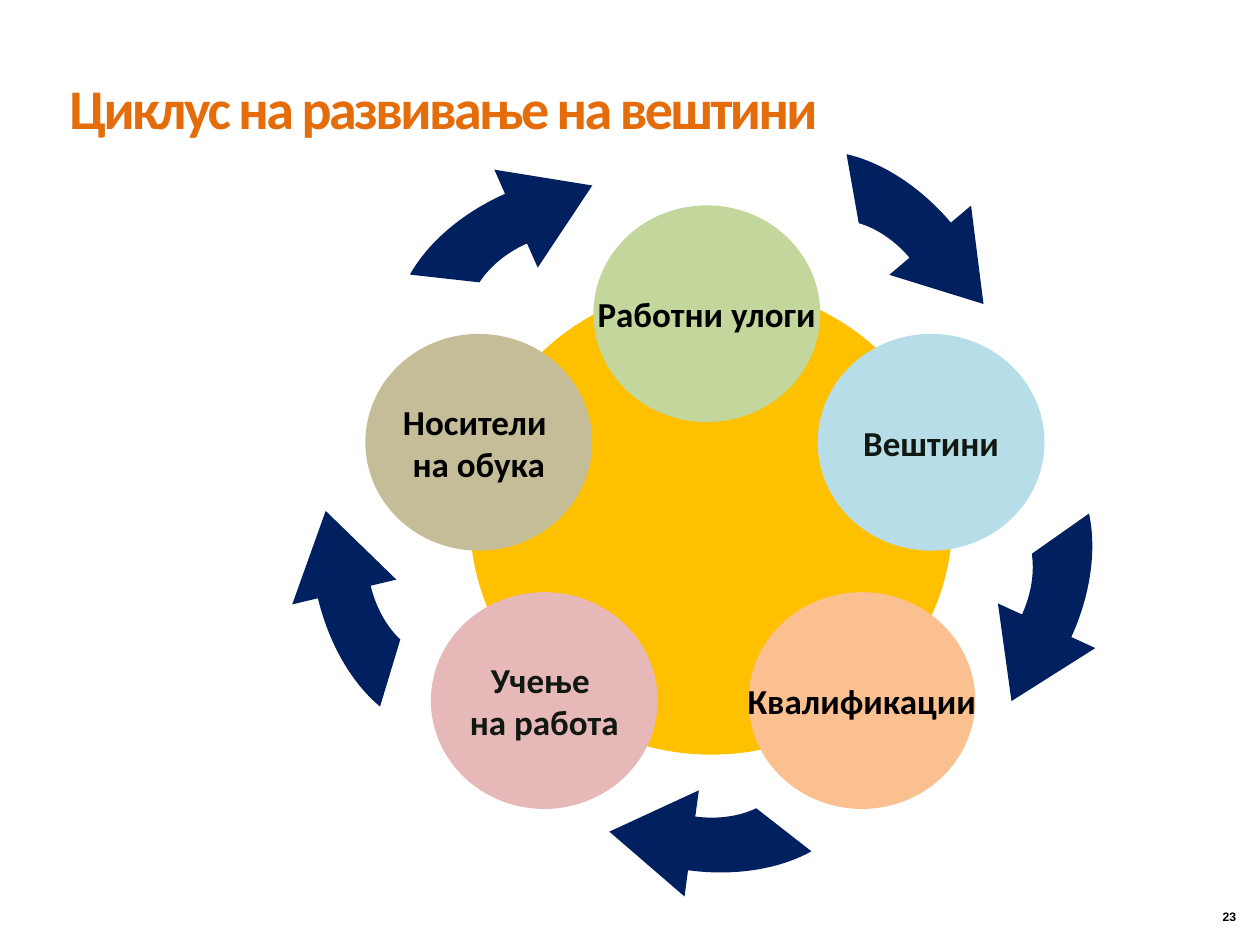
"""Build a slide showing the skills development cycle."""
from lxml import etree
from pptx import Presentation
from pptx.dml.color import RGBColor
from pptx.enum.shapes import MSO_SHAPE
from pptx.enum.text import MSO_ANCHOR, MSO_AUTO_SIZE, PP_ALIGN
from pptx.oxml.ns import qn
from pptx.util import Inches, Pt

OVAL = MSO_SHAPE.OVAL
LEFT, CENTER, RIGHT = PP_ALIGN.LEFT, PP_ALIGN.CENTER, PP_ALIGN.RIGHT
TOP, MIDDLE, BOTTOM = MSO_ANCHOR.TOP, MSO_ANCHOR.MIDDLE, MSO_ANCHOR.BOTTOM

WHITE = RGBColor(0xFF, 0xFF, 0xFF)
BLACK = RGBColor(0x00, 0x00, 0x00)
DARK = RGBColor(0x10, 0x18, 0x11)
ORANGE = RGBColor(0xE4, 0x6C, 0x0A)
GOLD = RGBColor(0xFF, 0xC0, 0x00)
NAVY = RGBColor(0x00, 0x20, 0x60)
GREEN = RGBColor(0xC3, 0xD6, 0x9B)
BLUE = RGBColor(0xB7, 0xDE, 0xE8)
PEACH = RGBColor(0xFA, 0xC0, 0x90)
PINK = RGBColor(0xE6, 0xB9, 0xB8)
TAN = RGBColor(0xC4, 0xBD, 0x97)

TITLE = "Циклус на развивање на вештини"
PAGE_NUMBER = "23"
HUB = (3.73, 2.26, 3.83, 3.73)
STAGE_SIZE = (1.8, 1.72)
STAGES = [
    (["Работни улоги"], 4.71, 1.63, GREEN, BLACK),
    (["Вештини"], 6.49, 2.65, BLUE, DARK),
    (["Учење ", "на работа"], 3.42, 4.7, PINK, DARK),
    (["Носители ", "на обука"], 2.9, 2.65, TAN, BLACK),
    (["Квалификации"], 5.94, 4.7, PEACH, BLACK),
]

ARROW_SIZE = (1.71, 2.62)
ARROWS = [
    (6.04, 1.01, 319.7),
    (6.87, 3.39, 24.6),
    (4.72, 4.75, 97.7),
    (2.5, 3.24, 166.6),
    (3.5, 1.01, 246.1),
]
ARROW_OUTLINE = [
    ("a:moveTo", [(1.28, 1.31)]),
    ("a:cubicBezTo", [(1.28, 1.13), (1.23, 0.96), (1.15, 0.84)]),
    ("a:lnTo", [(1.43, 0.36)]),
    ("a:cubicBezTo", [(1.61, 0.6), (1.71, 0.95), (1.71, 1.31)]),
    ("a:lnTo", [(1.71, 1.31)]),
    ("a:lnTo", [(1.92, 1.31)]),
    ("a:lnTo", [(1.49, 1.97)]),
    ("a:lnTo", [(1.07, 1.31)]),
    ("a:lnTo", [(1.28, 1.31)]),
    ("a:close", []),
]


def paint(shape, color):
    shape.shadow.inherit = False
    shape.fill.solid()
    shape.fill.fore_color.rgb = color
    shape.line.fill.background()


def write(frame, lines, size, color, font, align, anchor, wrap):
    frame.auto_size = MSO_AUTO_SIZE.NONE
    frame.word_wrap = wrap
    frame.vertical_anchor = anchor
    for index, line in enumerate(lines):
        paragraph = frame.paragraphs[0] if index == 0 else frame.add_paragraph()
        paragraph.text = line
        paragraph.alignment = align
        paragraph.font.name = font
        paragraph.font.size = Pt(size)
        paragraph.font.bold = True
        paragraph.font.color.rgb = color


def clear_margins(frame):
    frame.margin_left = frame.margin_right = 0
    frame.margin_top = frame.margin_bottom = 0


def add_oval(slide, box, color):
    oval = slide.shapes.add_shape(OVAL, *map(Inches, box))
    paint(oval, color)
    return oval


def add_arrow(slide, left, top, angle):
    width, height = map(Inches, ARROW_SIZE)
    builder = slide.shapes.build_freeform()
    builder.add_line_segments([(width, 0), (width, height)])
    arrow = builder.convert_to_shape(Inches(left), Inches(top))
    outline = arrow._element.xpath(".//a:path")[0]
    for segment in list(outline):
        outline.remove(segment)
    for tag, points in ARROW_OUTLINE:
        segment = etree.SubElement(outline, qn(tag))
        for x, y in points:
            etree.SubElement(segment, qn("a:pt"), x=str(Inches(x)), y=str(Inches(y)))
    arrow.rotation = angle
    paint(arrow, NAVY)


def main():
    deck = Presentation()
    deck.slide_width, deck.slide_height = Inches(10), Inches(7.5)
    slide = deck.slides.add_slide(deck.slide_layouts.get_by_name("Title Only"))
    slide.background.fill.solid()
    slide.background.fill.fore_color.rgb = WHITE

    title = slide.shapes.title
    title.left, title.top = Inches(0.55), Inches(0.69)
    title.width, title.height = Inches(6.54), Inches(0.79)
    clear_margins(title.text_frame)
    write(title.text_frame, [TITLE], 32, ORANGE, "Calibri", LEFT, TOP, True)
    heading = title.text_frame.paragraphs[0]
    heading.line_spacing = 0.8
    heading.runs[0]._r.get_or_add_rPr().set("spc", "-150")

    add_oval(slide, HUB, GOLD)
    for lines, left, top, fill, ink in STAGES:
        stage = add_oval(slide, (left, top, *STAGE_SIZE), fill)
        clear_margins(stage.text_frame)
        write(stage.text_frame, lines, 20, ink, "Calibri", CENTER, MIDDLE, False)
    for arrow in ARROWS:
        add_arrow(slide, *arrow)

    number = slide.shapes.add_textbox(*map(Inches, (8.85, 6.93, 1.06, 0.45)))
    write(number.text_frame, [PAGE_NUMBER], 7, BLACK, "Arial", RIGHT, BOTTOM, True)

    deck.save("out.pptx")


if __name__ == "__main__":
    main()
